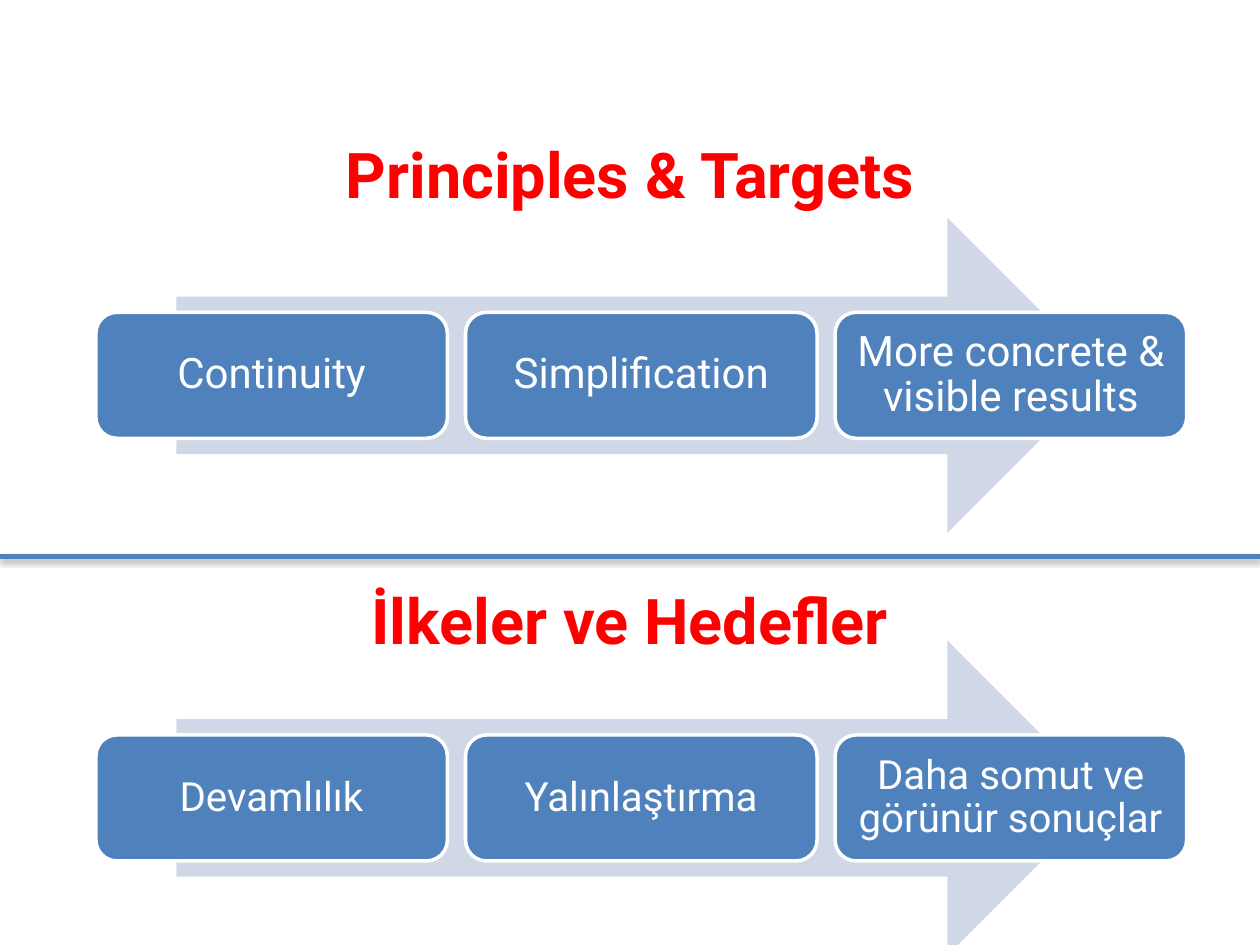
from lxml import etree
from pptx import Presentation
from pptx import util as u
from pptx.dml.color import RGBColor
from pptx.enum import shapes, text
from pptx.oxml import ns

RED = RGBColor(0xFF, 0x00, 0x00)
BLUE = RGBColor(0x4F, 0x81, 0xBD)
PALE = RGBColor(0xD0, 0xD8, 0xE8)
WHITE = RGBColor(0xFF, 0xFF, 0xFF)
FONT = "Roboto"
SHADOW = (
    f'<a:effectLst {ns.nsdecls("a")}>'
    '<a:outerShdw blurRad="39370" dist="22860" dir="5400000" rotWithShape="0">'
    '<a:srgbClr val="000000"><a:alpha val="35000"/></a:srgbClr>'
    "</a:outerShdw></a:effectLst>"
)


def write(tf, content, size, color, bold=False, inset=(7.2, 3.6), spacing=1.0):
    tf.word_wrap = True
    tf.vertical_anchor = text.MSO_ANCHOR.MIDDLE
    tf.margin_left = tf.margin_right = u.Pt(inset[0])
    tf.margin_top = tf.margin_bottom = u.Pt(inset[1])
    p = tf.paragraphs[0]
    p.alignment = text.PP_ALIGN.CENTER
    p.line_spacing = spacing
    r = p.add_run()
    r.text = content
    r.font.name = FONT
    r.font.size = u.Pt(size)
    r.font.bold = bold
    r.font.color.rgb = color


class Deck:
    def __init__(self):
        self.prs = Presentation()
        self.prs.slide_width, self.prs.slide_height = u.Pt(720), u.Pt(540)
        self.s = self.prs.slides.add_slide(self.prs.slide_layouts[6])

    def title(self, content, top):
        sp = self.s.shapes.add_textbox(u.Pt(54), u.Pt(top), u.Pt(612), u.Pt(54))
        write(sp.text_frame, content, 36, RED, bold=True)

    def shape(self, parent, kind, left, top, width, height, fill, line=None):
        sp = parent.add_shape(kind, u.Pt(left), u.Pt(top), u.Pt(width), u.Pt(height))
        sp.shadow.inherit = False
        sp.fill.solid()
        sp.fill.fore_color.rgb = fill
        if line is None:
            sp.line.fill.background()
        else:
            sp.line.color.rgb = line
            sp.line.width = u.Pt(2)
        return sp

    def process(self, top, steps, size):
        group = self.s.shapes.add_group_shape().shapes
        kinds = shapes.MSO_SHAPE
        self.shape(group, kinds.RIGHT_ARROW, 100.8, top, 530.6, 180, PALE)
        for i, step in enumerate(steps):
            sp = self.shape(group, kinds.ROUNDED_RECTANGLE, 54.8 + 211.2 * i,
                            top + 54, 200.9, 72, BLUE, WHITE)
            write(sp.text_frame, step, size, WHITE, inset=(7.2, 7.2), spacing=0.9)

    def divider(self, y):
        c = self.s.shapes.add_connector(
            shapes.MSO_CONNECTOR.STRAIGHT, 0, u.Pt(y), u.Pt(720), u.Pt(y))
        c.line.color.rgb = BLUE
        c.line.width = u.Pt(3)
        c._element.spPr.append(etree.fromstring(SHADOW))


def main():
    deck = Deck()
    deck.title("Principles & Targets", 72)
    deck.process(124.5, ["Continuity", "Simplification",
                         "More concrete & visible results"], 24)
    deck.process(366, ["Devamlılık", "Yalınlaştırma",
                       "Daha somut ve görünür sonuçlar"], 23)
    deck.divider(318)
    deck.title("İlkeler ve Hedefler", 327)
    deck.prs.save("out.pptx")


if __name__ == "__main__":
    main()
